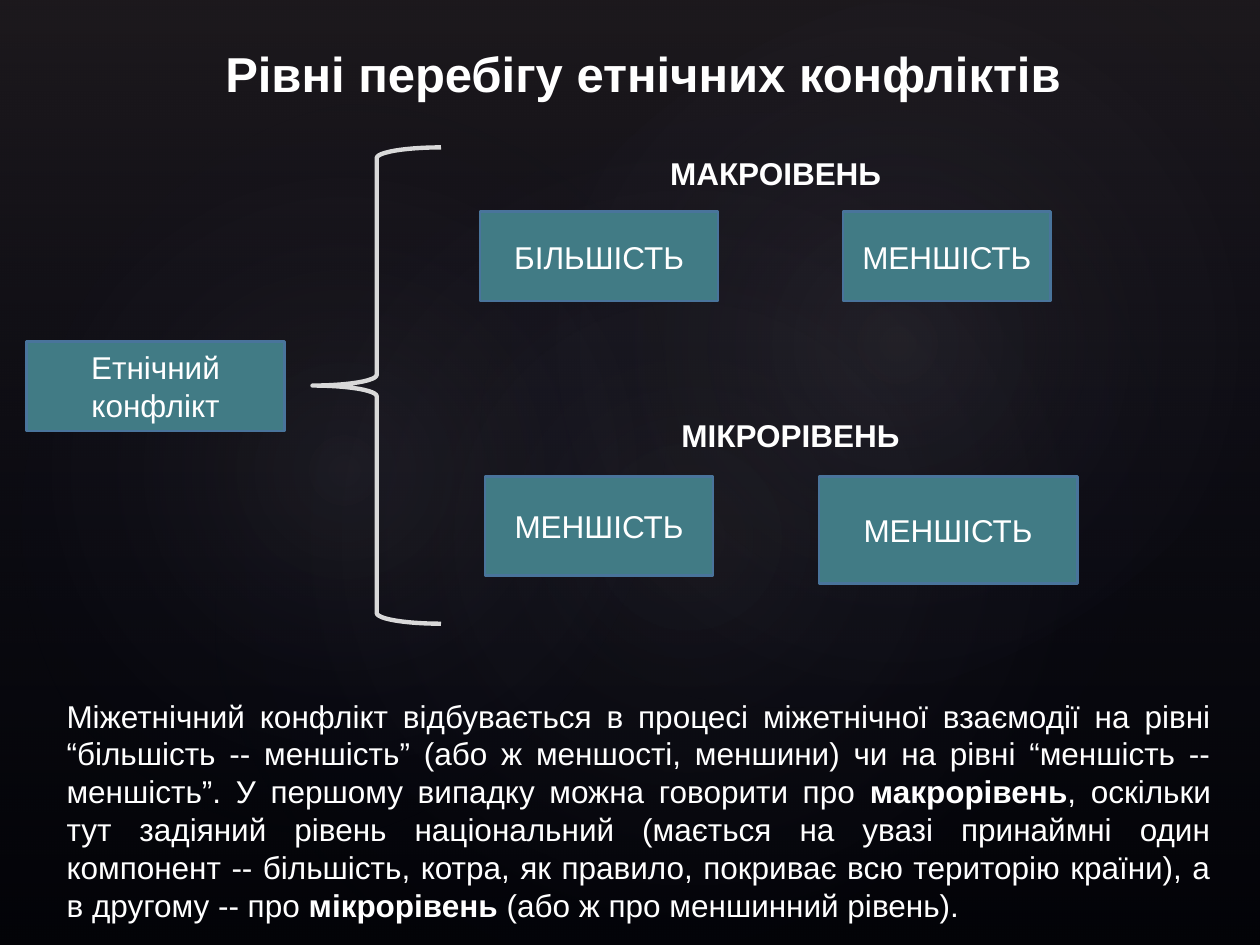
from dataclasses import dataclass
from typing import NamedTuple

from lxml.etree import SubElement
from pptx import Presentation
from pptx.dml.color import RGBColor
from pptx.enum.shapes import MSO_SHAPE
from pptx.enum.text import MSO_ANCHOR, MSO_AUTO_SIZE, PP_ALIGN
from pptx.oxml.ns import qn
from pptx.util import Inches, Pt


@dataclass(frozen=True)
class Theme:
    font: str = "Arial"
    title_size: int = 28
    text_size: int = 18
    background: str = "000000"
    text: str = "FFFFFF"
    box_fill: str = "417B85"
    box_line: str = "49749B"
    brace: str = "D9D9D9"
    wash: str = "504652"
    glow: str = "C4BCC6"
    dark: str = "242852"


class Frame(NamedTuple):
    left: float
    top: float
    width: float
    height: float


class Stop(NamedTuple):
    position: int
    color: str
    opacity: int


class Glow(NamedTuple):
    frame: Frame
    rotation: float
    opacity: int


class Box(NamedTuple):
    text: str
    frame: Frame


class Caption(NamedTuple):
    text: str
    frame: Frame
    size: int


THEME = Theme()

WASH = [Stop(0, THEME.wash, 36), Stop(100, THEME.dark, 10)]
GLOWS = [
    Glow(Frame(1.5, 1.14, 7.92, 6.24), 328.7, 7),
    Glow(Frame(-0.3, 1.28, 6.06, 4.9), 294.3, 8),
    Glow(Frame(3.58, 0.13, 7.09, 5.2), 328.7, 8),
]

MACRO_TOP, MICRO_TOP = 1.68, 3.78
BOXES = [
    Box("Етнічний конфлікт", Frame(0.21, 2.71, 2.05, 0.71)),
    Box("БІЛЬШІСТЬ", Frame(3.81, MACRO_TOP, 1.89, 0.71)),
    Box("МЕНШІСТЬ", Frame(6.69, MACRO_TOP, 1.65, 0.71)),
    Box("МЕНШІСТЬ", Frame(3.85, MICRO_TOP, 1.81, 0.79)),
    Box("МЕНШІСТЬ", Frame(6.5, MICRO_TOP, 2.05, 0.85)),
]
CAPTIONS = [
    Caption("Рівні перебігу етнічних конфліктів", Frame(1.69, 0.3, 6.9, 0.57), THEME.title_size),
    Caption("МАКРОІВЕНЬ", Frame(5.22, 1.17, 1.9, 0.4), THEME.text_size),
    Caption("МІКРОРІВЕНЬ", Frame(5.31, 3.25, 1.95, 0.4), THEME.text_size),
]
EXPLANATION = [
    ("Міжетнічний конфлікт відбувається в процесі міжетнічної взаємодії на рівні "
     "“більшість -- меншість” (або ж меншості, меншини) чи на рівні “меншість -- "
     "меншість”. У першому випадку можна говорити про ", False),
    ("макрорівень", True),
    (", оскільки тут задіяний рівень національний (мається на увазі принаймні один "
     "компонент -- більшість, котра, як правило, покриває всю територію країни), "
     "а в другому -- про ", False),
    ("мікрорівень", True),
    (" (або ж про меншинний рівень).", False),
]


def add_run(paragraph, text: str, *, size: int = THEME.text_size, bold: bool = False) -> None:
    run = paragraph.add_run()
    run.text = text
    run.font.name = THEME.font
    run.font.size = Pt(size)
    run.font.bold = bold
    run.font.color.rgb = RGBColor.from_string(THEME.text)


def add_plain_shape(slide, kind: MSO_SHAPE, frame: Frame):
    """Add a shape without shadow, fill or line."""
    shape = slide.shapes.add_shape(kind, *map(Inches, frame))
    shape.shadow.inherit = False
    shape.fill.background()
    shape.line.fill.background()
    return shape


def set_line(shape, color: str, width: float) -> None:
    shape.line.color.rgb = RGBColor.from_string(color)
    shape.line.width = Pt(width)


def set_gradient(shape, stops: list[Stop], radial: bool) -> None:
    """Replace the empty fill with a gradient whose stops are translucent."""
    properties = shape.element.spPr
    empty_fill = properties.find(qn("a:noFill"))
    gradient = SubElement(properties, qn("a:gradFill"), rotWithShape="1")
    properties.replace(empty_fill, gradient)
    stop_list = SubElement(gradient, qn("a:gsLst"))
    for stop in stops:
        entry = SubElement(stop_list, qn("a:gs"), pos=str(stop.position * 1000))
        color = SubElement(entry, qn("a:srgbClr"), val=stop.color)
        SubElement(color, qn("a:alpha"), val=str(stop.opacity * 1000))
    if radial:
        center = SubElement(gradient, qn("a:path"), path="circle")
        SubElement(center, qn("a:fillToRect"), dict.fromkeys("ltrb", "50000"))
    else:
        SubElement(gradient, qn("a:lin"), ang="5400000", scaled="0")


def add_backdrop(slide, whole_slide: Frame) -> None:
    fill = slide.background.fill
    fill.solid()
    fill.fore_color.rgb = RGBColor.from_string(THEME.background)
    set_gradient(add_plain_shape(slide, MSO_SHAPE.RECTANGLE, whole_slide), WASH, radial=False)
    for glow in GLOWS:
        ellipse = add_plain_shape(slide, MSO_SHAPE.OVAL, glow.frame)
        ellipse.rotation = glow.rotation
        stops = [Stop(0, THEME.glow, glow.opacity), Stop(58, THEME.dark, 0)]
        set_gradient(ellipse, stops, radial=True)


def add_text_box(slide, frame: Frame, *, wrap: bool):
    """Add a text box that grows with its text and return its paragraph."""
    text_frame = slide.shapes.add_textbox(*map(Inches, frame)).text_frame
    text_frame.word_wrap = wrap
    text_frame.auto_size = MSO_AUTO_SIZE.SHAPE_TO_FIT_TEXT
    return text_frame.paragraphs[0]


def add_box(slide, box: Box) -> None:
    shape = add_plain_shape(slide, MSO_SHAPE.RECTANGLE, box.frame)
    shape.fill.solid()
    shape.fill.fore_color.rgb = RGBColor.from_string(THEME.box_fill)
    set_line(shape, THEME.box_line, 1.5)
    shape.text_frame.word_wrap = True
    shape.text_frame.vertical_anchor = MSO_ANCHOR.MIDDLE
    paragraph = shape.text_frame.paragraphs[0]
    paragraph.alignment = PP_ALIGN.CENTER
    add_run(paragraph, box.text)


def main() -> None:
    presentation = Presentation()
    presentation.slide_width, presentation.slide_height = Inches(10), Inches(7.5)
    slide = presentation.slides.add_slide(presentation.slide_layouts[6])

    add_backdrop(slide, Frame(0, 0, 10, 7.5))

    explanation = add_text_box(slide, Frame(0.43, 5.48, 9.28, 1.92), wrap=True)
    explanation.alignment = PP_ALIGN.JUSTIFY
    for text, bold in EXPLANATION:
        add_run(explanation, text, bold=bold)

    brace = add_plain_shape(slide, MSO_SHAPE.LEFT_BRACE, Frame(2.48, 1.17, 1.02, 3.78))
    set_line(brace, THEME.brace, 2.5)
    for box in BOXES:
        add_box(slide, box)
    for caption in CAPTIONS:
        paragraph = add_text_box(slide, caption.frame, wrap=False)
        add_run(paragraph, caption.text, size=caption.size, bold=True)

    presentation.save("out.pptx")


if __name__ == "__main__":
    main()
